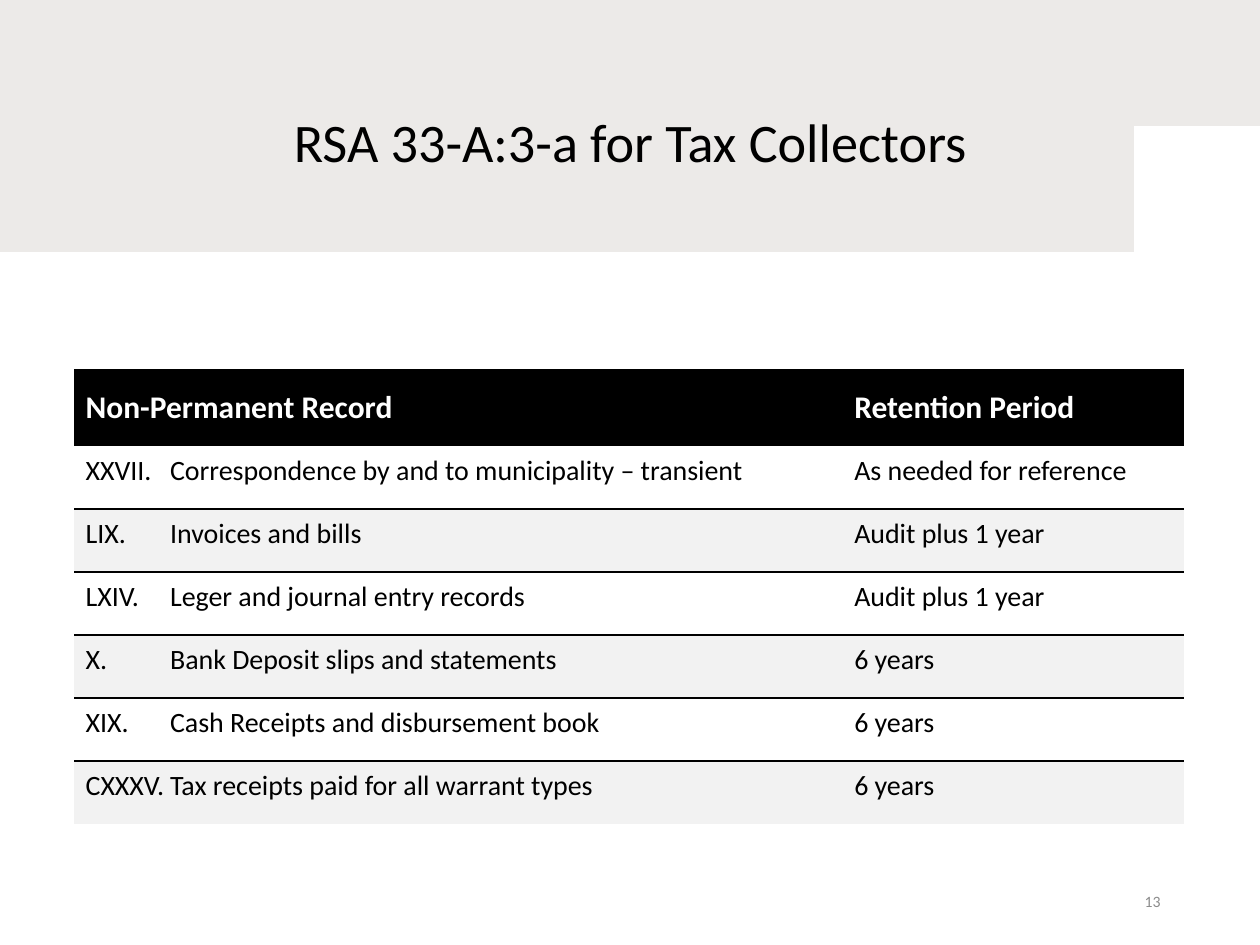
"""Builds the slide on record retention periods for tax collectors."""
from lxml import etree
from pptx import Presentation
from pptx.dml.color import RGBColor
from pptx.enum.text import MSO_ANCHOR, PP_ALIGN
from pptx.oxml.ns import qn
from pptx.util import Inches, Pt

TOP, MIDDLE, BOTTOM = MSO_ANCHOR.TOP, MSO_ANCHOR.MIDDLE, MSO_ANCHOR.BOTTOM
LEFT, CENTER, RIGHT = PP_ALIGN.LEFT, PP_ALIGN.CENTER, PP_ALIGN.RIGHT

COLORS = {"black": "000000", "white": "FFFFFF", "band": "F2F2F2", "paper": "82766A", "number": "8C8C8C"}
FONT = "Calibri"
PAPER_OPACITY = 15

TITLE = "RSA 33-A:3-a for Tax Collectors"
PAGE_NUMBER = "13"
HEADER = ("Non-Permanent Record", "Retention Period")
RECORDS = [
    ("XXVII.", "Correspondence by and to municipality – transient", "As needed for reference"),
    ("LIX.", "Invoices and bills", "Audit plus 1 year"),
    ("LXIV.", "Leger and journal entry records", "Audit plus 1 year"),
    ("X.", "Bank Deposit slips and statements", "6 years"),
    ("XIX.", "Cash Receipts and disbursement book", "6 years"),
    ("CXXXV.", "Tax receipts paid for all warrant types", "6 years"),
]
COLUMN_WIDTHS = (6.1, 2.71)
HEADER_HEIGHT, RECORD_HEIGHT = 0.61, 0.5
NUMERAL_TAB = 0.67

TORN_EDGE = [
    (10, 1.27), (9.84, 1.26), (9.47, 1.36), (9.22, 1.39), (9.03, 1.48), (8.71, 1.58), (8.48, 1.66),
    (8.13, 1.79), (7.96, 1.89), (7.73, 1.92), (7.19, 2.03), (6.84, 2.04), (6.58, 2.09), (6.24, 2.16),
    (6.12, 2.14), (5.84, 2.14), (5.6, 2.16), (5.33, 2.23), (5.05, 2.24), (5, 2.28), (4.7, 2.26),
    (4.49, 2.21), (4.31, 2.23), (3.69, 2.2), (3.39, 2.14), (3.09, 2.09), (2.66, 2.03), (2.33, 2.09),
    (2.04, 2.13), (1.85, 2.13), (1.5, 2.06), (1.38, 1.99), (1.23, 1.97), (1.08, 1.89), (0.65, 1.86),
    (0, 1.77),
]


def rgb(color):
    return RGBColor.from_string(COLORS[color])


def write(frame, text, size, color, align=LEFT, bold=False, spacing=1.0, after=0):
    paragraph = frame.paragraphs[0]
    layout = {"alignment": align, "line_spacing": spacing, "space_after": Pt(after)}
    for key, value in layout.items():
        setattr(paragraph, key, value)
    run = paragraph.add_run()
    run.text = text
    for key, value in {"name": FONT, "size": Pt(size), "bold": bold}.items():
        setattr(run.font, key, value)
    run.font.color.rgb = rgb(color)
    return paragraph


def add_label(slide, box, text, anchor, **style):
    frame = slide.shapes.add_textbox(*map(Inches, box)).text_frame
    frame.word_wrap = True
    frame.vertical_anchor = anchor
    write(frame, text, **style)


def add_torn_paper(slide):
    builder = slide.shapes.build_freeform(0, 0, scale=Inches(1))
    builder.add_line_segments([(10, 0)] + TORN_EDGE, close=True)
    paper = builder.convert_to_shape()
    paper.shadow.inherit = False
    paper.line.fill.background()
    paper.fill.solid()
    paper.fill.fore_color.rgb = rgb("paper")
    tint = paper._element.spPr.find(".//" + qn("a:srgbClr"))
    etree.SubElement(tint, qn("a:alpha"), val=str(PAPER_OPACITY * 1000))


def add_rule(cell, side):
    rule = etree.Element(qn(f"a:{side}"), w=str(Pt(1)))
    fill = etree.SubElement(rule, qn("a:solidFill"))
    etree.SubElement(fill, qn("a:srgbClr"), val=COLORS["black"])
    cell._tc.get_or_add_tcPr().insert(0, rule)


def add_tab_stop(paragraph, position):
    stops = etree.SubElement(paragraph._p.get_or_add_pPr(), qn("a:tabLst"))
    etree.SubElement(stops, qn("a:tab"), pos=str(Inches(position)), algn="l")


def fill_cell(cell, text, fill, top_margin, anchor, **style):
    margins = {"margin_left": 0.09, "margin_top": top_margin, "margin_right": 0.06, "margin_bottom": 0.13}
    for key, value in margins.items():
        setattr(cell, key, Inches(value))
    cell.vertical_anchor = anchor
    cell.fill.solid()
    cell.fill.fore_color.rgb = rgb(fill)
    return write(cell.text_frame, text, **style)


def add_records(slide):
    heights = [HEADER_HEIGHT] + [RECORD_HEIGHT] * len(RECORDS)
    box = (0.59, 2.93, sum(COLUMN_WIDTHS), sum(heights))
    table = slide.shapes.add_table(len(heights), len(HEADER), *map(Inches, box)).table
    table._tbl.tblPr.find(qn("a:tableStyleId")).text = "{2D5ABB26-0587-4C30-8999-92F81FD0307C}"
    table.horz_banding = False
    for column, width in zip(table.columns, COLUMN_WIDTHS):
        column.width = Inches(width)
    for row, height in zip(table.rows, heights):
        row.height = Inches(height)
    for column, heading in enumerate(HEADER):
        fill_cell(table.cell(0, column), heading, "black", 0.13, MIDDLE, size=18, color="white", bold=True)
    for row, (numeral, record, period) in enumerate(RECORDS, 1):
        fill, side = ("white", "lnB") if row % 2 else ("band", "lnT")
        for column, text in enumerate((f"{numeral}\t{record}", period)):
            cell = table.cell(row, column)
            paragraph = fill_cell(cell, text, fill, 0.06, TOP, size=16, color="black")
            add_rule(cell, side)
            if column == 0:
                add_tab_stop(paragraph, NUMERAL_TAB)


def main():
    deck = Presentation()
    deck.slide_width, deck.slide_height = Inches(10), Inches(7.5)
    slide = deck.slides.add_slide(deck.slide_layouts[6])
    add_torn_paper(slide)
    add_label(slide, (0.68, 0.54, 8.64, 0.89), TITLE, BOTTOM, size=31, color="black", align=CENTER, spacing=0.9)
    add_label(slide, (7.06, 6.95, 2.25, 0.4), PAGE_NUMBER, MIDDLE, size=9, color="number", align=RIGHT, after=6)
    add_records(slide)
    deck.save("out.pptx")


if __name__ == "__main__":
    main()
